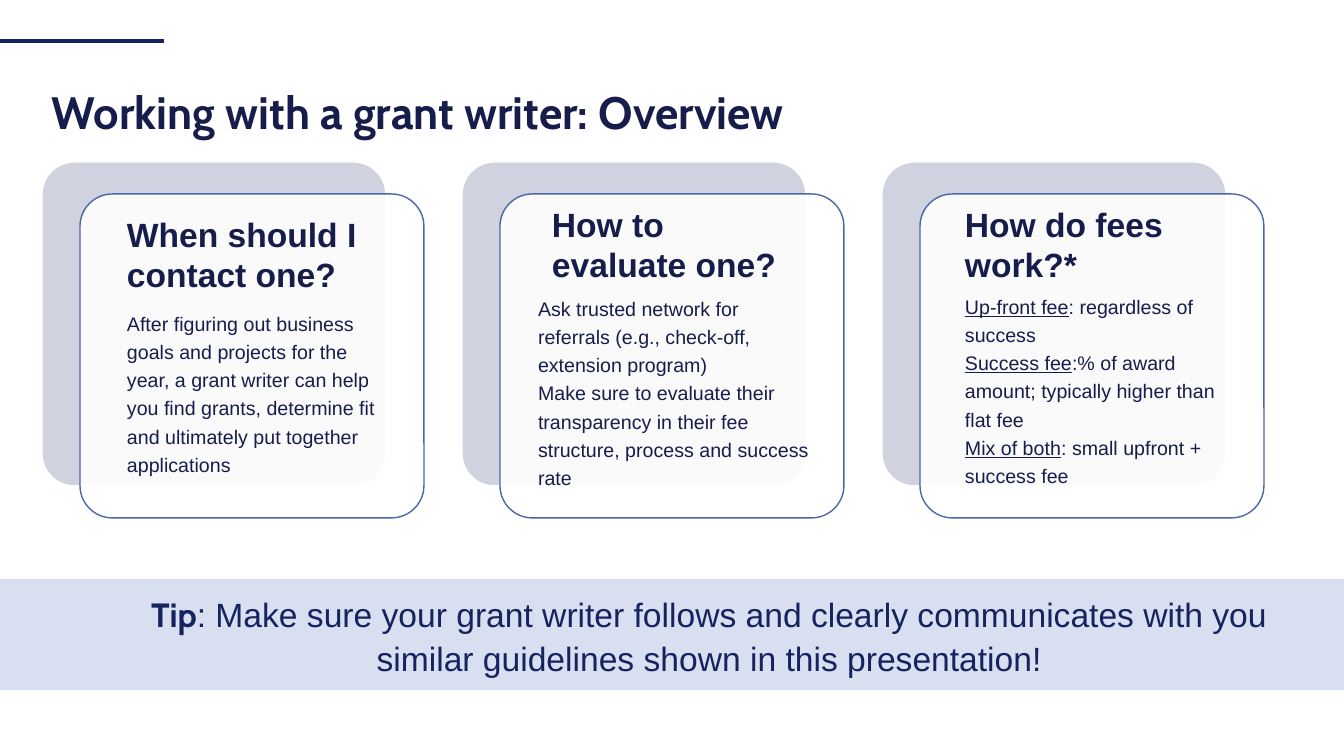
from dataclasses import dataclass

from lxml.etree import SubElement
from pptx import Presentation
from pptx.dml.color import RGBColor
from pptx.enum.shapes import MSO_CONNECTOR, MSO_SHAPE
from pptx.enum.text import MSO_ANCHOR, PP_ALIGN
from pptx.oxml.ns import qn
from pptx.util import Pt

EMU_PER_PX = 914400 / 100.8
SLIDE_W, SLIDE_H = 1344, 756
CARD_X, CARD_Y, CARD_W, CARD_H, CARD_STEP = 42, 162, 344, 324, 420
FRONT_DX, FRONT_DY = 38, 32


@dataclass(frozen=True)
class Theme:
    ink: str = "171D4B"
    navy: str = "15235F"
    band: str = "D8DFF0"
    card_back: str = "D0D3DF"
    card_edge: str = "4A66AC"
    white: str = "FFFFFF"
    title_font: str = "Cabin"
    body_font: str = "Arial"
    title_size: float = 32.4
    heading_size: float = 24
    body_size: float = 14


THEME = Theme()

# Heading, its place, body paragraphs of (text, underlined) runs, their place
CARDS = [
    ("When should I contact one?", (127, 214, 250, 82),
     [[("After figuring out business goals and projects for the year, a grant "
        "writer can help you find grants, determine fit and ultimately put "
        "together applications", False)]],
     (127, 307, 250, 171)),
    ("How to evaluate one?", (552, 204, 250, 82),
     [[("Ask trusted network for referrals (e.g., check-off, extension program)", False)],
      [("Make sure to evaluate their transparency in their fee structure, "
        "process and success rate", False)]],
     (538, 292, 278, 200)),
    ("How do fees work?*", (965, 204, 250, 82),
     [[("Up-front fee", True), (": regardless of success", False)],
      [("Success fee", True),
       (":% of award amount; typically higher than flat fee", False)],
      [("Mix of both", True), (": small upfront + success fee", False)]],
     (965, 290, 278, 200)),
]


def px(n):
    return round(n * EMU_PER_PX)


def rgb(color):
    return RGBColor.from_string(color)


def add_text(s, box, paragraphs, size, font=THEME.body_font, color=THEME.ink,
             bold=False, spacing=1.0, align=PP_ALIGN.LEFT,
             anchor=MSO_ANCHOR.TOP, inset=0):
    """Add a text box; each paragraph is a list of (text, font overrides)."""
    tf = s.shapes.add_textbox(*map(px, box)).text_frame
    tf.word_wrap = True
    tf.vertical_anchor = anchor
    tf.margin_left = tf.margin_right = px(inset)
    tf.margin_top = tf.margin_bottom = 0
    for i, runs in enumerate(paragraphs):
        p = tf.add_paragraph() if i else tf.paragraphs[0]
        p.alignment = align
        p.line_spacing = spacing
        for text, overrides in runs:
            r = p.add_run()
            r.text = text
            r.font.size = Pt(size)
            r.font.color.rgb = rgb(color)
            look = {"name": font, "bold": bold, **overrides}
            for key, value in look.items():
                setattr(r.font, key, value)


def add_box(s, kind, box, fill, line=None, opacity=100):
    sp = s.shapes.add_shape(kind, *map(px, box))
    sp.shadow.inherit = False
    sp.fill.solid()
    sp.fill.fore_color.rgb = rgb(fill)
    if opacity < 100:
        clr = sp.fill._xPr.find(f"{qn('a:solidFill')}/{qn('a:srgbClr')}")
        SubElement(clr, qn("a:alpha"), val=str(opacity * 1000))
    if line:
        sp.line.color.rgb = rgb(line)
        sp.line.width = Pt(1)
    else:
        sp.line.fill.background()
    return sp


def add_rule(s, x1, y1, x2, y2):
    cx = s.shapes.add_connector(MSO_CONNECTOR.STRAIGHT, *map(px, (x1, y1, x2, y2)))
    cx.line.color.rgb = rgb(THEME.navy)
    cx.line.width = Pt(3)
    SubElement(cx._element.spPr, qn("a:effectLst"))


def add_card(s, x, y):
    """Add a tinted rounded panel with a translucent outlined one over it."""
    layers = [(0, 0, THEME.card_back, THEME.white, 100),
              (FRONT_DX, FRONT_DY, THEME.white, THEME.card_edge, 90)]
    for dx, dy, fill, line, opacity in layers:
        sp = add_box(s, MSO_SHAPE.ROUNDED_RECTANGLE,
                     (x + dx, y + dy, CARD_W, CARD_H), fill, line, opacity)
        sp.adjustments[0] = 0.1


def main():
    prs = Presentation()
    prs.slide_width, prs.slide_height = px(SLIDE_W), px(SLIDE_H)
    s = prs.slides.add_slide(prs.slide_layouts[6])

    add_rule(s, 0, 41, 164, 41)
    add_text(s, (42, 67, 1147, 67), [[("Working with a grant writer: Overview", {})]],
             THEME.title_size, font=THEME.title_font, bold=True, spacing=1.4,
             anchor=MSO_ANCHOR.MIDDLE, inset=10)

    add_box(s, MSO_SHAPE.RECTANGLE, (0, 579, SLIDE_W, 111), THEME.band)
    tip = [("Tip", {"name": THEME.title_font, "bold": True}),
           (": Make sure your grant writer follows and clearly communicates with "
            "you similar guidelines shown in this presentation!", {})]
    add_text(s, (111, 590, 1196, 90), [tip], THEME.heading_size,
             color=THEME.navy, spacing=1.1, align=PP_ALIGN.CENTER)

    for i, (heading, heading_box, body, body_box) in enumerate(CARDS):
        add_card(s, CARD_X + i * CARD_STEP, CARD_Y)
        add_text(s, heading_box, [[(heading, {})]], THEME.heading_size, bold=True)
        paragraphs = [[(text, {"underline": under}) for text, under in runs]
                      for runs in body]
        add_text(s, body_box, paragraphs, THEME.body_size, spacing=1.2)

    prs.save("out.pptx")


if __name__ == "__main__":
    main()
